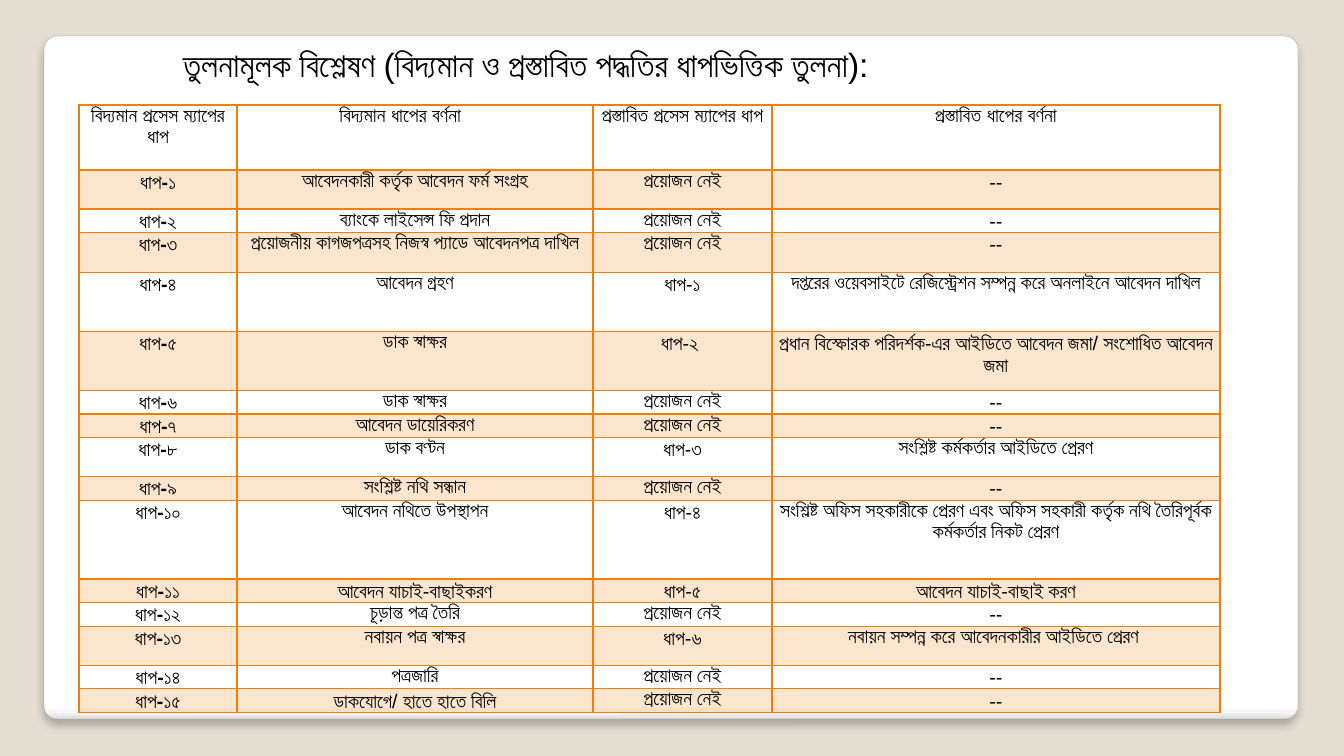
from dataclasses import dataclass
from lxml.etree import SubElement
from pptx import Presentation
from pptx.dml.color import RGBColor as RGB
from pptx.enum.shapes import MSO_SHAPE as SHAPE
from pptx.enum.text import PP_ALIGN as ALIGN
from pptx.oxml.ns import qn
from pptx.util import Emu, Pt


@dataclass(frozen=True)
class Theme:
    font: str = "Arial"
    page: str = "E3DED1"
    ink: str = "000000"
    accent: str = "F07F09"
    panel_line: str = "A4A4A4"
    panel_stops: tuple = ((0, "FFFFFF"), (98, "FFFFFF"), (99, "F7F7F7"), (100, "DADADA"))
    title_size: int = 24
    cell_size: int = 14
    line_spacing: float = 1.07
    band_alpha: int = 20
    shadow_alpha: int = 25


def px(n):
    return Emu(round(n * 12192000 / 1344))


def node(parent, tag, **attrs):
    return SubElement(parent, qn(tag), {k: str(v) for k, v in attrs.items()})


class Deck:
    def __init__(self, theme):
        self.theme = theme
        self.prs = Presentation()
        self.prs.slide_width, self.prs.slide_height = px(1344), px(756)
        self.slide = self.prs.slides.add_slide(self.prs.slide_layouts[6])
        fill = self.slide.background.fill
        fill.solid()
        fill.fore_color.rgb = RGB.from_string(theme.page)

    def style(self, p, size, bold=False):
        for r in p.runs:
            r.font.name = self.theme.font
            r.font.size = Pt(size)
            r.font.bold = bold
            r.font.color.rgb = RGB.from_string(self.theme.ink)

    def panel(self, x, y, w, h):
        t = self.theme
        sp = self.slide.shapes.add_shape(SHAPE.ROUNDED_RECTANGLE, px(x), px(y), px(w), px(h))
        sp.adjustments[0] = 0.02
        sp.line.color.rgb = RGB.from_string(t.panel_line)
        sp.line.width = Pt(0.16)
        sp.fill.gradient()
        sp.fill.gradient_angle = 270
        stops = sp.element.spPr.find(".//" + qn("a:gsLst"))
        for stop in list(stops):
            stops.remove(stop)
        for pos, color in t.panel_stops:
            node(node(stops, "a:gs", pos=pos * 1000), "a:srgbClr", val=color)
        sp.shadow.inherit = False
        effects = sp.element.spPr.find(qn("a:effectLst"))
        shadow = node(effects, "a:outerShdw", blurRad=Pt(6), dist=Pt(4), dir=5400000, rotWithShape=0)
        node(node(shadow, "a:srgbClr", val=t.ink), "a:alpha", val=t.shadow_alpha * 1000)

    def title(self, text, x, y, w, h):
        tf = self.slide.shapes.add_textbox(px(x), px(y), px(w), px(h)).text_frame
        tf.word_wrap = True
        tf.text = text
        self.style(tf.paragraphs[0], self.theme.title_size)

    def borders(self, cell, bottom):
        tc_pr = cell._tc.get_or_add_tcPr()
        for side, width in (("L", 1), ("R", 1), ("T", 1), ("B", bottom)):
            ln = node(tc_pr, "a:ln" + side, w=Pt(width))
            node(node(ln, "a:solidFill"), "a:srgbClr", val=self.theme.accent)

    def cell(self, cell, text, header, bold, banded):
        t = self.theme
        cell.margin_left = cell.margin_right = px(6)
        cell.margin_top = cell.margin_bottom = 0
        self.borders(cell, 2 if header else 1)
        if banded:
            cell.fill.solid()
            cell.fill.fore_color.rgb = RGB.from_string(t.accent)
            color = cell._tc.tcPr.find(qn("a:solidFill") + "/" + qn("a:srgbClr"))
            node(color, "a:alpha", val=t.band_alpha * 1000)
        else:
            cell.fill.background()
        p = cell.text_frame.paragraphs[0]
        p.text = text
        p.alignment = ALIGN.CENTER
        p.line_spacing = t.line_spacing
        if "\t" in text:
            tabs = node(p._p.get_or_add_pPr(), "a:tabLst")
            node(tabs, "a:tab", pos=px(70), algn="l")
            node(tabs, "a:tab", pos=px(111), algn="ctr")
        self.style(p, t.cell_size, bold)

    def table(self, rows, x, y, widths, heights):
        frame = self.slide.shapes.add_table(
            len(rows), len(widths), px(x), px(y), px(sum(widths)), px(sum(heights)))
        table = frame.table
        table.horz_banding = False
        for column, width in zip(table.columns, widths):
            column.width = px(width)
        for i, (texts, height) in enumerate(zip(rows, heights)):
            table.rows[i].height = px(height)
            for j, text in enumerate(texts):
                self.cell(table.cell(i, j), text, i == 0, i == 0 or j == 0, i % 2 == 1)


HEADER = ("বিদ্যমান প্রসেস ম্যাপের ধাপ", "বিদ্যমান ধাপের বর্ণনা\t",
          "প্রস্তাবিত প্রসেস ম্যাপের ধাপ", "প্রস্তাবিত ধাপের বর্ণনা")
DROPPED = ("প্রয়োজন নেই", "--")
STEPS = [
    (39, "আবেদনকারী কর্তৃক আবেদন ফর্ম সংগ্রহ", *DROPPED),
    (22, "ব্যাংকে লাইসেন্স ফি প্রদান", *DROPPED),
    (40, "প্রয়োজনীয় কাগজপত্রসহ নিজস্ব প্যাডে আবেদনপত্র দাখিল", *DROPPED),
    (59, "আবেদন গ্রহণ", "ধাপ-১", "দপ্তরের ওয়েবসাইটে রেজিস্ট্রেশন সম্পন্ন করে অনলাইনে আবেদন দাখিল"),
    (59, "ডাক স্বাক্ষর", "ধাপ-২ ", "প্রধান বিস্ফোরক পরিদর্শক-এর আইডিতে আবেদন জমা/ সংশোধিত আবেদন জমা"),
    (22, "ডাক স্বাক্ষর", *DROPPED),
    (22, "আবেদন ডায়েরিকরণ", *DROPPED),
    (39, "ডাক বণ্টন", "ধাপ-৩", "সংশ্লিষ্ট কর্মকর্তার আইডিতে প্রেরণ"),
    (22, "সংশ্লিষ্ট নথি সন্ধান", *DROPPED),
    (79, "আবেদন নথিতে উপস্থাপন", "ধাপ-৪",
     "সংশ্লিষ্ট অফিস সহকারীকে প্রেরণ এবং অফিস সহকারী কর্তৃক নথি তৈরিপূর্বক কর্মকর্তার নিকট প্রেরণ"),
    (22, "আবেদন যাচাই-বাছাইকরণ", "ধাপ-৫", "আবেদন যাচাই-বাছাই করণ"),
    (22, "চূড়ান্ত পত্র তৈরি", *DROPPED),
    (39, "নবায়ন পত্র স্বাক্ষর", "ধাপ-৬", "নবায়ন সম্পন্ন করে আবেদনকারীর আইডিতে প্রেরণ "),
    (22, "পত্রজারি", *DROPPED),
    (22, "ডাকযোগে/ হাতে হাতে বিলি", *DROPPED),
]
BENGALI_DIGITS = str.maketrans("0123456789", "০১২৩৪৫৬৭৮৯")


def main():
    deck = Deck(Theme())
    deck.panel(44, 36, 1254, 683)
    rows = [HEADER]
    for number, (_, *texts) in enumerate(STEPS, 1):
        rows.append((f"ধাপ-{number}".translate(BENGALI_DIGITS), *texts))
    heights = [65] + [step[0] for step in STEPS]
    deck.table(rows, 79, 105, (158, 356, 179, 448), heights)
    deck.title("তুলনামূলক বিশ্লেষণ (বিদ্যমান ও প্রস্তাবিত পদ্ধতির ধাপভিত্তিক তুলনা):", 173, 39, 977, 112)
    deck.prs.save("out.pptx")


if __name__ == "__main__":
    main()
